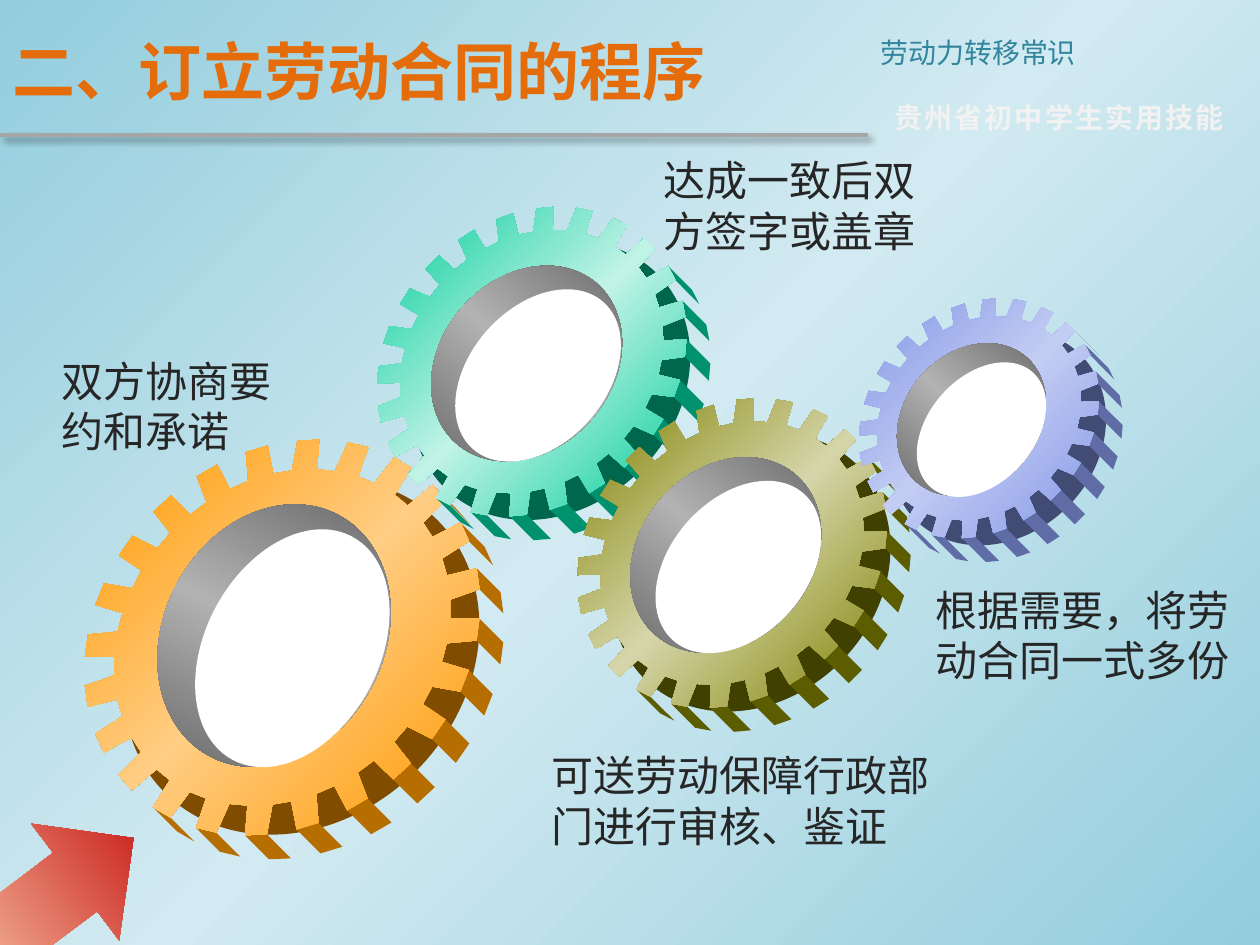
"""Build a slide with four meshing gears and the steps of signing a labour contract."""
import math
import pptx
import pptx.util
import pptx.dml.color
import pptx.enum.shapes
import pptx.enum.text
import pptx.oxml
import pptx.oxml.ns
from lxml import etree

Inches = pptx.util.Inches
NS = pptx.oxml.ns.nsdecls("a")
FONT = "Noto Sans CJK SC"
HUES = {"sky": "93CDDD", "pale": "D2EAF1", "rule": "A6A6A6", "teal": "31859C",
        "title": "E46C0A", "ink": "262626", "white": "FFFFFF", "mist": "F2F2F2",
        "steel": "525252", "shine": "B2B2B2", "peach": "FCD5B5", "red": "C00000"}
RGB = pptx.dml.color.RGBColor.from_string


def paint(fill, root, hues, angle=0):
    """Fill with one colour or evenly spaced gradient stops."""
    if len(hues) == 1:
        fill.solid()
        fill.fore_color.rgb = RGB(hues[0])
        return
    fill.gradient()
    grad = root.find(".//" + pptx.oxml.ns.qn("a:gradFill"))
    for child in list(grad):
        grad.remove(child)
    stops = "".join(
        f'<a:gs pos="{i * 100000 // (len(hues) - 1)}"><a:srgbClr val="{hue}"/></a:gs>'
        for i, hue in enumerate(hues))
    grad.append(pptx.oxml.parse_xml(f"<a:gsLst {NS}>{stops}</a:gsLst>"))
    grad.append(pptx.oxml.parse_xml(f'<a:lin {NS} ang="{angle * 60000}" scaled="0"/>'))


def write(shape, words, size, hue, bold=False):
    """Set one styled paragraph and return it."""
    frame = shape.text_frame
    frame.text = words
    frame.word_wrap = True
    para = frame.paragraphs[0]
    font = para.runs[0].font
    font.name, font.size, font.bold = FONT, pptx.util.Pt(size), bold
    font.color.rgb = RGB(hue)
    east = etree.SubElement(font._element, pptx.oxml.ns.qn("a:ea"))
    east.set("typeface", FONT)
    return para


deck = pptx.Presentation()
deck.slide_width, deck.slide_height = Inches(10), Inches(7.5)
slide = deck.slides.add_slide(deck.slide_layouts[5])
shapes = slide.shapes
paint(slide.background.fill, slide.element, [HUES["sky"], HUES["pale"], HUES["sky"]], 45)

rule = shapes.add_connector(pptx.enum.shapes.MSO_CONNECTOR.STRAIGHT,
                            Inches(0), Inches(1.07), Inches(6.89), Inches(1.07))
rule.line.color.rgb = RGB(HUES["rule"])
rule.line.width = pptx.util.Pt(2.25)
rule._element.spPr.append(pptx.oxml.parse_xml(
    f'<a:effectLst {NS}><a:outerShdw blurRad="50800" dist="38100" dir="2700000" algn="tl">'
    '<a:srgbClr val="000000"><a:alpha val="40000"/></a:srgbClr></a:outerShdw></a:effectLst>'))

title = shapes.title
title.left, title.top, title.width, title.height = map(Inches, (0, 0.05, 6.89, 1.02))
para = write(title, "二、订立劳动合同的程序", 36, HUES["title"], True)
para.alignment = pptx.enum.text.PP_ALIGN.LEFT
title.text_frame.vertical_anchor = pptx.enum.text.MSO_ANCHOR.MIDDLE
title.text_frame.auto_size = pptx.enum.text.MSO_AUTO_SIZE.NONE

head = shapes.add_textbox(Inches(6.89), Inches(0.23), Inches(3.11), Inches(0.37))
para = write(head, "劳动力转移常识", 16, HUES["teal"])
para.alignment = pptx.enum.text.PP_ALIGN.JUSTIFY
sub = shapes.add_textbox(Inches(7), Inches(0.75), Inches(3), Inches(0.37))
para = write(sub, "贵州省初中学生实用技能", 16, HUES["mist"], True)
para.runs[0].font._element.set("spc", "130")

gears = [
    (2.24, 5.06, 1.7, -12.35, ("FF9900", "FFCD83"),
     (1.3, 3.96, 1.75, 2.17), (1.63, 4.14, 1.38, 2.01), 28.2),
    (4.22, 2.87, 1.33, 0, ("00CC99", "C1F3E6"),
     (3.5, 2.04, 1.36, 1.69), (3.73, 2.2, 1.08, 1.56), 41.8),
    (5.81, 4.39, 1.33, 0, ("808000", "D5D5AA"),
     (5.08, 3.56, 1.36, 1.69), (5.32, 3.72, 1.08, 1.56), 41.8),
    (7.77, 3.32, 1.03, 0, ("8497E6", "C3CCF3"),
     (7.18, 2.67, 1.06, 1.32), (7.37, 2.8, 0.84, 1.22), 41.8),
]
TEETH, DEPTH, SQUASH = 24, 0.19, 0.08
CORNERS = [(-3.2, 1), (3.2, 1), (4.3, 0.85), (10.7, 0.85)]
STEEL = [HUES["steel"], HUES["shine"], HUES["steel"]]

for mid, row, size, phase, (base, glow), ring, hole, tilt in gears:
    group = shapes.add_group_shape()
    rim = []
    for tooth in range(TEETH):
        for turn, reach in CORNERS:
            angle = math.radians(phase + tooth * 360 / TEETH + turn)
            x, y = (size * reach * f(angle) for f in (math.cos, math.sin))
            rim.append((mid + x - SQUASH * (x + y), row + y - SQUASH * (x + y)))
    tips = [[a, b, (b[0] + DEPTH, b[1] + DEPTH), (a[0] + DEPTH, a[1] + DEPTH)]
            for a, b in zip(rim[::4], rim[1::4]) if b[1] - a[1] > b[0] - a[0]]
    dark, dim = ("".join(f"{int(int(base[i:i + 2], 16) * shade):02X}" for i in (0, 2, 4))
                 for shade in (0.5, 0.72))
    high = size * 1.8
    wide = high * (1 - 2 * SQUASH)
    body = (mid + DEPTH * 0.8 - wide / 2, row + DEPTH * 0.8 - high / 2, wide, high)
    parts = [(body, 45, [dark], 0), ([tips], 0, [dim], 0), ([[rim]], 0, [base, glow, base], 45),
             (ring, tilt, STEEL, 90), (hole, tilt, [HUES["white"]], 0)]
    for form, turn, hues, angle in parts:
        if len(form) == 4:
            part = group.shapes.add_shape(pptx.enum.shapes.MSO_SHAPE.OVAL, *map(Inches, form))
            part.rotation = turn
        else:
            loops = [[(Inches(x), Inches(y)) for x, y in loop] for loop in form[0]]
            pen = group.shapes.build_freeform(*loops[0][0])
            for loop in loops:
                if loop is not loops[0]:
                    pen.move_to(*loop[0])
                pen.add_line_segments(loop[1:], close=True)
            part = pen.convert_to_shape()
        part.shadow.inherit = False
        part.line.fill.background()
        paint(part.fill, part._element, hues, angle)

for left, top, width, words in (
        (0.39, 2.77, 2.05, "双方协商要约和承诺"),
        (5.17, 1.18, 2.37, "达成一致后双方签字或盖章"),
        (4.28, 5.9, 3.32, "可送劳动保障行政部门进行审核、鉴证"),
        (7.33, 4.59, 2.67, "根据需要，将劳动合同一式多份")):
    note = shapes.add_textbox(Inches(left), Inches(top), Inches(width), Inches(0.91))
    write(note, words, 24, HUES["ink"])

arrow = shapes.add_shape(pptx.enum.shapes.MSO_SHAPE.RIGHT_ARROW,
                         Inches(-0.28), Inches(6.52), Inches(1.49), Inches(1.16))
arrow.rotation = 323
arrow.shadow.inherit = False
arrow.line.fill.background()
paint(arrow.fill, arrow._element, [HUES["peach"], HUES["red"]])

deck.save("out.pptx")
